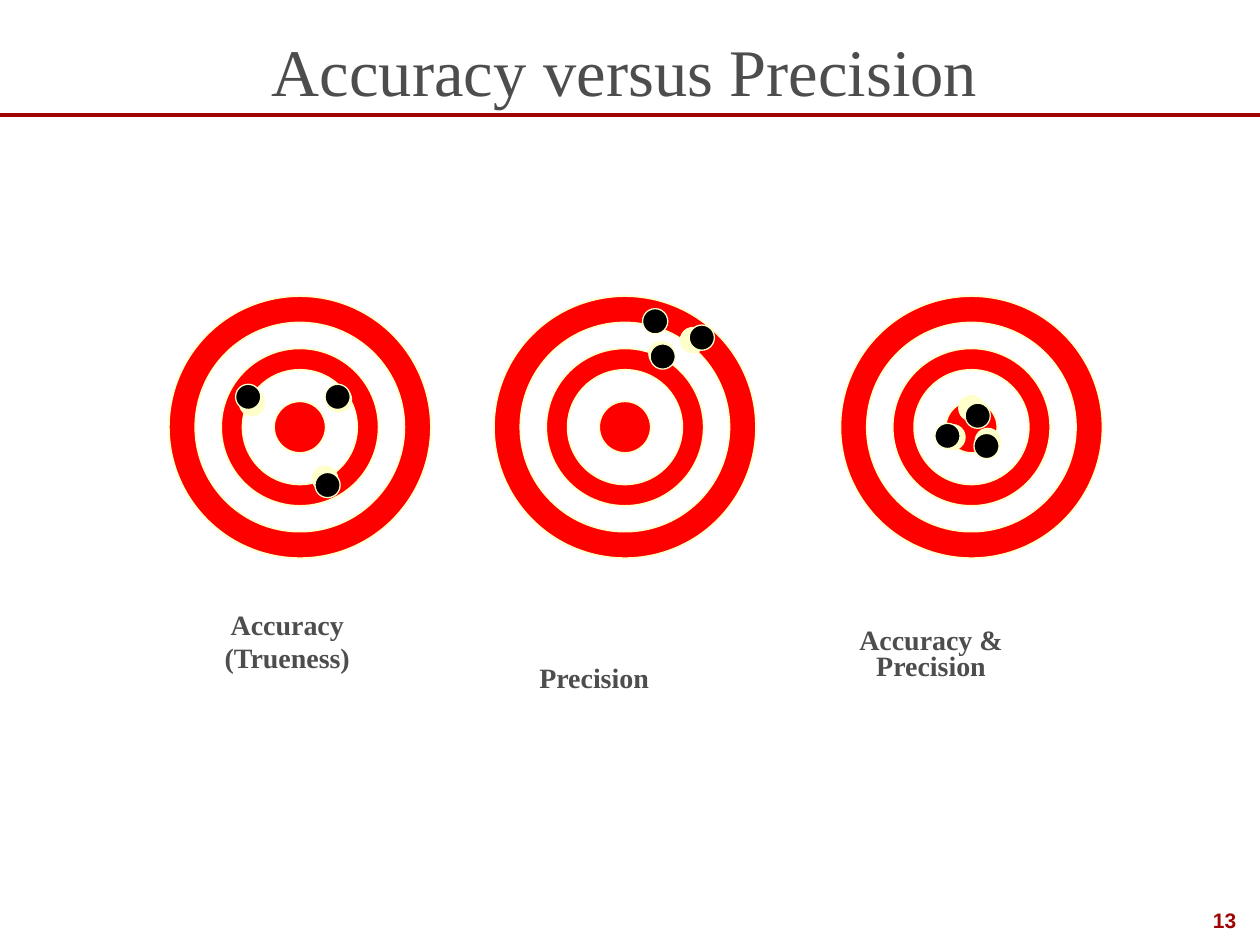
from pptx import Presentation
from pptx.dml.color import RGBColor
from pptx.enum.shapes import MSO_CONNECTOR, MSO_SHAPE
from pptx.enum.text import MSO_ANCHOR, MSO_AUTO_SIZE, PP_ALIGN
from pptx.oxml.ns import qn
from pptx.util import Inches, Pt

OVAL, LINE = MSO_SHAPE.OVAL, MSO_CONNECTOR.STRAIGHT
TOP, BOTTOM = MSO_ANCHOR.TOP, MSO_ANCHOR.BOTTOM
MID, RIGHT = PP_ALIGN.CENTER, PP_ALIGN.RIGHT
FIXED = MSO_AUTO_SIZE.NONE

# The grid has cells of one inch
COLS, ROWS = 10, 7.5
HUES = {"rule": "A10302", "text": "4D4D4D", "red": "FF0000",
        "white": "FFFFFF", "pale": "FFFFCC", "black": "000000"}
SERIF = "Times New Roman"
HEAD = {"size": Pt(38), "name": SERIF, "bold": False}
LABEL = {"size": Pt(16), "name": SERIF, "bold": True}
PAGE = {"size": Pt(12), "name": "Arial", "bold": True}

# Targets: ring widths from outside in, and hits as offsets from the centre
RINGS = (2.08, 1.66, 1.25, 0.91, 0.41)
MID_ROW = 3.39
DOT = 0.2
TARGETS = (
    {"col": 2.38,
     "pale": ((0.2, 0.41), (-0.38, -0.19), (0.31, -0.22)),
     "black": ((0.3, -0.24), (0.22, 0.46), (-0.41, -0.24))},
    {"col": 4.96,
     "pale": ((0.29, -0.58), (0.54, -0.69)),
     "black": ((0.24, -0.84), (0.61, -0.71), (0.3, -0.56))},
    {"col": 7.71,
     "pale": ((0.13, 0.11), (-0.15, 0.08), (0, -0.15)),
     "black": ((0.05, -0.09), (-0.19, 0.07), (0.12, 0.15))},
)
# Labels: lines, cell box, wrap, line spacing
LABELS = (
    (["Accuracy (Trueness)"], (1.34, 4.77, 1.88, 0.64), True, 1.0),
    (["Precision"], (4.17, 5.19, 1.09, 0.37), False, 1.0),
    (["Accuracy &", "Precision"], (6.71, 4.94, 1.36, 0.53), False, 0.8),
)


def tint(name):
    return RGBColor.from_string(HUES[name])


def write(frame, lines, font, hue="text", align=MID, gap=1.0,
          wrap=True, anchor=TOP):
    frame.auto_size = FIXED
    frame.word_wrap = wrap
    frame.vertical_anchor = anchor
    for i, line in enumerate(lines):
        para = frame.paragraphs[0] if i == 0 else frame.add_paragraph()
        para.alignment = align
        para.line_spacing = gap
        run = para.add_run()
        run.text = line
        for key, value in font.items():
            setattr(run.font, key, value)
        run.font.color.rgb = tint(hue)


def add_text(slide, box, lines, font, **style):
    shape = slide.shapes.add_textbox(*map(Inches, box))
    write(shape.text_frame, lines, font, **style)


def add_title(slide, text, box):
    title = slide.shapes.title
    sides = ("left", "top", "width", "height")
    for side, value in zip(sides, box):
        setattr(title, side, Inches(value))
    write(title.text_frame, [text], HEAD, gap=0.8)


def add_rule(slide, row):
    y = Inches(row)
    rule = slide.shapes.add_connector(LINE, 0, y, Inches(COLS), y)
    rule.line.color.rgb = tint("rule")
    rule.line.width = Pt(2.25)
    props = rule._element.spPr
    props.append(props.makeelement(qn("a:effectLst"), {}))


def add_disc(slide, x, y, size, hue, edge):
    box = (x - size / 2, y - size / 2, size, size)
    disc = slide.shapes.add_shape(OVAL, *map(Inches, box))
    disc.shadow.inherit = False
    disc.fill.solid()
    disc.fill.fore_color.rgb = tint(hue)
    disc.line.color.rgb = tint("pale")
    disc.line.width = Pt(edge)


def add_target(slide, target):
    col = target["col"]
    for i, size in enumerate(RINGS):
        add_disc(slide, col, MID_ROW, size, ("red", "white")[i % 2], 1)
    # Black hits lie over the pale ones
    for hue in ("pale", "black"):
        for dx, dy in target[hue]:
            add_disc(slide, col + dx, MID_ROW + dy, DOT, hue, 0.75)


def main():
    deck = Presentation()
    deck.slide_width, deck.slide_height = Inches(COLS), Inches(ROWS)
    slide = deck.slides.add_slide(deck.slide_layouts[5])

    # Heading and page number
    add_rule(slide, 0.91)
    add_title(slide, "Accuracy versus Precision", (1.25, 0.31, 7.42, 0.61))
    add_text(slide, (7.83, 7.06, 2.08, 0.39), ["13"], PAGE,
             hue="rule", align=RIGHT, anchor=BOTTOM)

    # Targets and their labels
    for target in TARGETS:
        add_target(slide, target)
    for lines, box, wrap, gap in LABELS:
        add_text(slide, box, lines, LABEL, wrap=wrap, gap=gap)

    deck.save("out.pptx")


if __name__ == "__main__":
    main()
